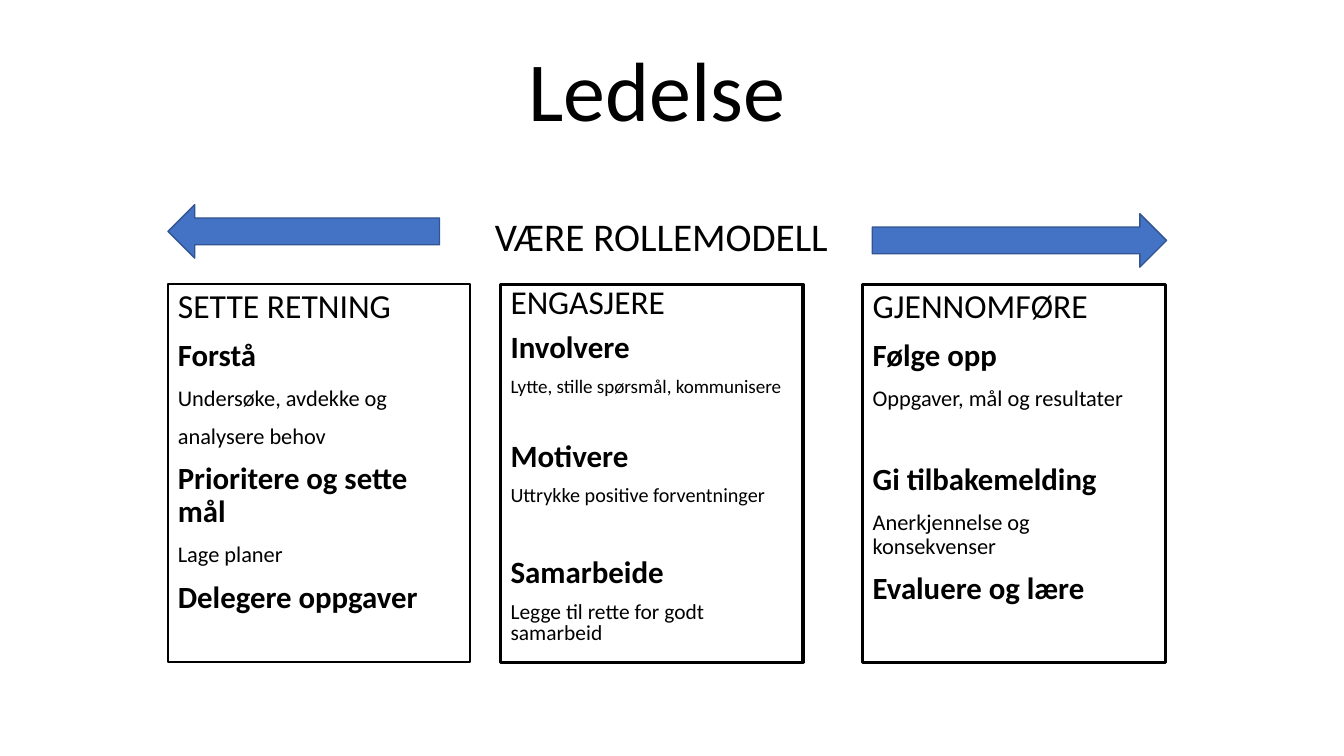
import pptx
import pptx.util
import pptx.dml.color
import pptx.enum.shapes
import pptx.enum.text

THEME = {
    "font": "Calibri",
    "ink": pptx.dml.color.RGBColor.from_string("000000"),
    "arrow": pptx.dml.color.RGBColor.from_string("4472C4"),
    "arrow edge": pptx.dml.color.RGBColor.from_string("325491"),
    "title": 60,
    "role": 28,
    "heading": 24,
    "topic": 22,
    "detail": 16,
    "tight heading": 23.8,
    "tight topic": 22.1,
    "tight detail": 15.3,
    "small detail": 14.4,
    "smallest detail": 13.6,
}
SHAPE = pptx.enum.shapes.MSO_SHAPE
ANCHOR = pptx.enum.text.MSO_ANCHOR
CENTER = pptx.enum.text.PP_ALIGN.CENTER

deck = pptx.Presentation()
deck.slide_width = pptx.util.Inches(13.33)
deck.slide_height = pptx.util.Inches(7.5)
slide = deck.slides.add_slide(deck.slide_layouts[6])


def area(left, top, width, height):
    """Turn percentages of the slide's size into lengths."""
    return [
        round(share * side / 100)
        for share, side in zip(
            (left, top, width, height), (deck.slide_width, deck.slide_height) * 2
        )
    ]


def write(paragraph, words, style, **layout):
    paragraph.text = words
    for name, value in layout.items():
        setattr(paragraph, name, value)
    face = {
        "name": THEME["font"],
        "size": pptx.util.Pt(THEME[style]),
        "bold": style.endswith("topic"),
    }
    for name, value in face.items():
        setattr(paragraph.font, name, value)
    paragraph.font.color.rgb = THEME["ink"]


# Centred lines above the columns
for words, style, place in (
    ("Ledelse", "title", (14.4, 5.47, 69, 13.6)),
    ("VÆRE ROLLEMODELL", "role", (11.7, 21.47, 75, 13.6)),
):
    frame = slide.shapes.add_textbox(*area(*place)).text_frame
    frame.word_wrap = True
    frame.vertical_anchor = ANCHOR.BOTTOM
    write(frame.paragraphs[0], words, style, alignment=CENTER, line_spacing=0.9)

# Three columns: left edge, border, line spacing, then (words, style, space before)
columns = (
    (12.5, 1.5, 0.9, (
        ("SETTE RETNING", "heading", 0),
        ("Forstå", "topic", 10),
        ("Undersøke, avdekke og", "detail", 10),
        ("analysere behov", "detail", 10),
        ("Prioritere og sette mål", "topic", 10),
        ("Lage planer", "detail", 10),
        ("Delegere oppgaver", "topic", 10),
    )),
    (37.25, 2.25, 0.8, (
        ("ENGASJERE", "tight heading", 0),
        ("Involvere", "tight topic", 10),
        ("Lytte, stille spørsmål, kommunisere", "smallest detail", 10),
        ("Motivere", "tight topic", 33),
        ("Uttrykke positive forventninger", "small detail", 10),
        ("Samarbeide", "tight topic", 38),
        ("Legge til rette for godt samarbeid", "tight detail", 10),
    )),
    (64.2, 2.25, 0.9, (
        ("GJENNOMFØRE", "heading", 0),
        ("Følge opp", "topic", 10),
        ("Oppgaver, mål og resultater", "detail", 10),
        ("Gi tilbakemelding", "topic", 37.5),
        ("Anerkjennelse og konsekvenser", "detail", 10),
        ("Evaluere og lære", "topic", 10),
    )),
)
for left, border, spacing, entries in columns:
    column = slide.shapes.add_shape(SHAPE.RECTANGLE, *area(left, 37.6, 22.5, 50))
    column.shadow.inherit = False
    column.fill.background()
    column.line.color.rgb = THEME["ink"]
    column.line.width = pptx.util.Pt(border)
    frame = column.text_frame
    frame.word_wrap = True
    frame.vertical_anchor = ANCHOR.TOP
    for index, (words, style, gap) in enumerate(entries):
        paragraph = frame.add_paragraph() if index else frame.paragraphs[0]
        write(
            paragraph, words, style,
            alignment=pptx.enum.text.PP_ALIGN.LEFT,
            line_spacing=spacing,
            space_before=pptx.util.Pt(gap),
        )

# Arrows pointing outwards from the role model line
for direction, place in (
    (SHAPE.RIGHT_ARROW, (64.9, 28.27, 21.9, 7.07)),
    (SHAPE.LEFT_ARROW, (12.5, 27.07, 20.2, 7.07)),
):
    arrow = slide.shapes.add_shape(direction, *area(*place))
    arrow.shadow.inherit = False
    arrow.fill.solid()
    arrow.fill.fore_color.rgb = THEME["arrow"]
    arrow.line.color.rgb = THEME["arrow edge"]
    arrow.line.width = pptx.util.Pt(1)

deck.save("out.pptx")
